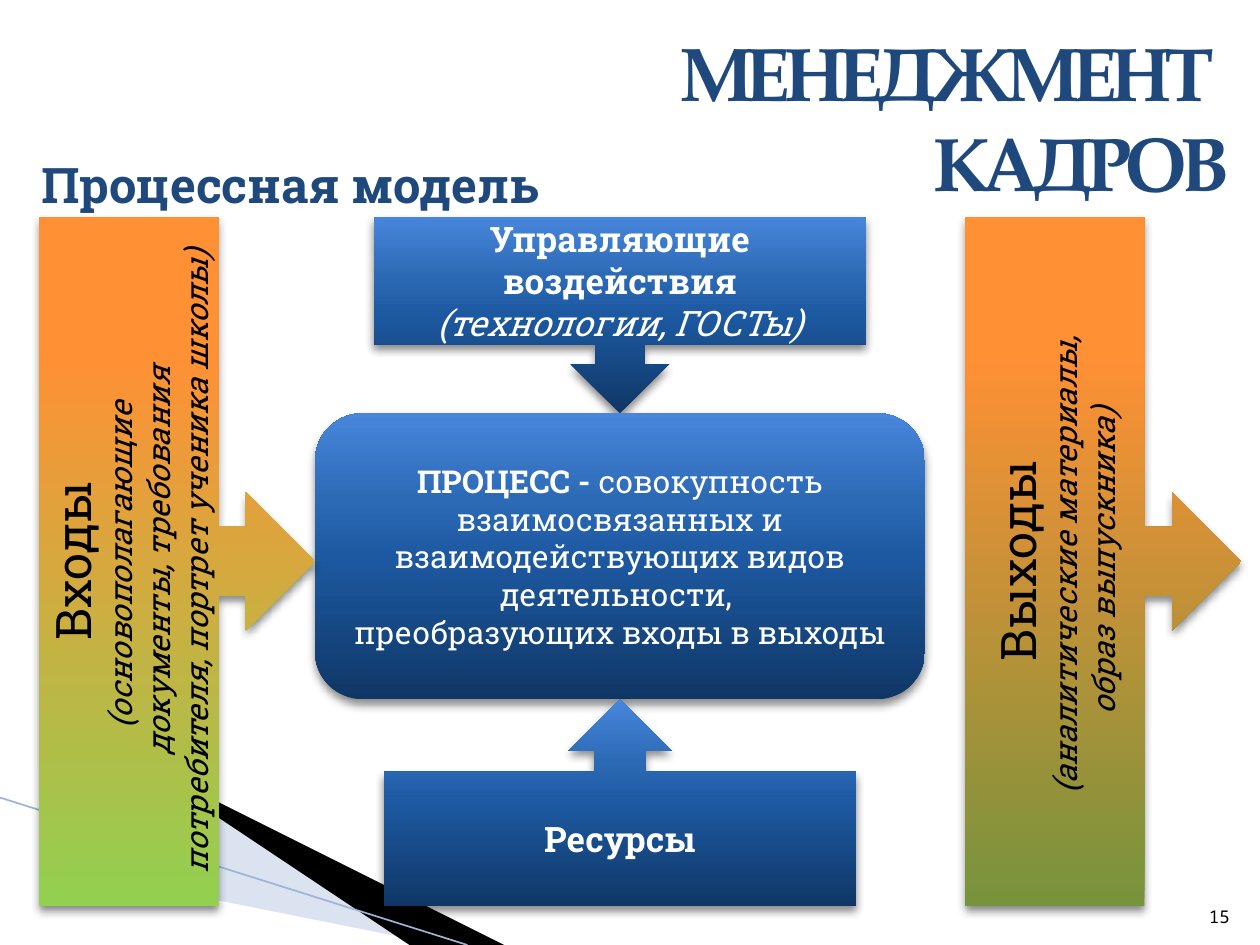
from dataclasses import dataclass

from lxml.etree import SubElement
from pptx import Presentation
from pptx.dml.color import RGBColor
from pptx.enum.shapes import MSO_CONNECTOR, MSO_SHAPE as Preset
from pptx.enum.text import MSO_ANCHOR as Anchor, MSO_AUTO_SIZE as AutoSize, PP_ALIGN as Align
from pptx.oxml.ns import qn
from pptx.util import Inches, Pt


@dataclass(frozen=True)
class Theme:
    body: str = "Roboto Slab"
    display: str = "TeX Gyre Pagella"
    number: str = "Noto Sans Mono"
    navy: str = "1F497D"
    white: str = "FFFFFF"
    black: str = "000000"
    pale: str = "A7B9DB"
    edge: str = "9EB3D6"
    blues: tuple = ((0, "0F3766"), (50, "1D59A1"), (70, "2D6AB6"), (100, "4786DB"))
    inputs: tuple = ((0, "92D050"), (80, "FF9034"), (100, "FF9136"))
    outputs: tuple = ((0, "77933C"), (80, "FF9034"), (100, "FF9136"))
    huge: int = 43
    large: int = 28
    medium: int = 20
    text: int = 18
    small: int = 10


THEME = Theme()

# Content: each paragraph is a list of (text, size, style) runs
HEADING = "МЕНЕДЖМЕНТ \vКАДРОВ"
SUBTITLE = "Процессная модель"
PAGE_NUMBER = "15"
CONTROLS = [[("Управляющие воздействия", THEME.medium, "b")],
            [("(технологии, ГОСТы)", THEME.medium, "i")]]
PROCESS = [[("ПРОЦЕСС - ", THEME.text, "b"),
            ("совокупность взаимосвязанных и взаимодействующих видов деятельности, ", THEME.text, "")],
           [("преобразующих входы в выходы", THEME.text, "")]]
RESOURCES = [[("Ресурсы", THEME.medium, "b")]]
INPUTS = [[("Входы", THEME.large, "")],
          [("(основополагающие ", THEME.text, "i")],
          [("документы, требования", THEME.text, "i")],
          [("потребителя, портрет ученика школы)", THEME.text, "i")]]
OUTPUTS = [[("Выходы", THEME.large, "")],
           [("(аналитические материалы, ", THEME.text, "i")],
           [("образ выпускника)", THEME.text, "i")]]

# Layout in inches: a centred stack between two side columns
WIDTH, HEIGHT = 10, 7.5
TOP, CENTRE = 1.72, 4.92
STACK = [(Preset.DOWN_ARROW_CALLOUT, 3.91, 1.56, CONTROLS),
         (Preset.ROUNDED_RECTANGLE, 4.84, 2.27, PROCESS),
         (Preset.UP_ARROW_CALLOUT, 3.75, 1.64, RESOURCES)]
SIDE_WIDTH = 2.19
SIDES = [(0.31, THEME.inputs, INPUTS), (7.66, THEME.outputs, OUTPUTS)]
WEDGES = [([(0.55, 6.51), (5.95, HEIGHT), (4.56, HEIGHT), (0.55, 6.5)], THEME.pale, 40),
          ([(0.53, 6.49), (4.57, HEIGHT), (3.72, HEIGHT), (0.54, 6.5)], THEME.black, 100)]


def style(font, size, colour, name=THEME.body, bold=False, italic=False):
    font.name, font.size = name, Pt(size)
    font.bold, font.italic = bold, italic
    font.color.rgb = RGBColor.from_string(colour)


def add_colour(parent, colour, alpha=100):
    element = SubElement(parent, qn("a:srgbClr"), val=colour)
    SubElement(element, qn("a:alpha"), val=str(alpha * 1000))


def fill_gradient(shape, stops):
    shape.fill.gradient()
    shape.fill.gradient_angle = 90
    stop_list = shape._element.spPr.find(qn("a:gradFill")).find(qn("a:gsLst"))
    for old in list(stop_list):
        stop_list.remove(old)
    for position, colour in stops:
        add_colour(SubElement(stop_list, qn("a:gs"), pos=str(position * 1000)), colour)


def add_shadow(shape):
    shape.shadow.inherit = False
    effects = shape._element.spPr.find(qn("a:effectLst"))
    shadow = SubElement(effects, qn("a:outerShdw"), blurRad=str(Pt(5)), dist=str(Pt(3)),
                        dir="5400000", rotWithShape="0")
    add_colour(shadow, THEME.black, 45)


def add_block(page, preset, area, stops, paragraphs, colour, vertical=False):
    shape = page.shapes.add_shape(preset, *map(Inches, area))
    fill_gradient(shape, stops)
    shape.line.fill.background()
    add_shadow(shape)
    frame = shape.text_frame
    frame.word_wrap, frame.vertical_anchor = True, Anchor.MIDDLE
    if vertical:
        frame._txBody.bodyPr.set("vert", "vert270")
    for index, runs in enumerate(paragraphs):
        para = frame.add_paragraph() if index else frame.paragraphs[0]
        para.alignment = Align.CENTER
        for text, size, look in runs:
            span = para.add_run()
            span.text = text
            style(span.font, size, colour, bold=look == "b", italic=look == "i")


def write(box, text, align, anchor, **look):
    frame = box.text_frame
    frame.word_wrap, frame.auto_size = True, AutoSize.NONE
    frame.vertical_anchor = anchor
    frame.text = text
    para = frame.paragraphs[0]
    para.alignment = align
    for span in para.runs:
        style(span.font, **look)
    return para


def add_backdrop(page):
    for points, colour, alpha in WEDGES:
        builder = page.shapes.build_freeform(*points[0], scale=Inches(1))
        builder.add_line_segments(points[1:], close=True)
        wedge = builder.convert_to_shape()
        wedge.shadow.inherit = False
        wedge.line.fill.background()
        wedge.fill.solid()
        wedge.fill.fore_color.rgb = RGBColor.from_string(colour)
        tint = wedge._element.spPr.find(qn("a:solidFill"))[0]
        SubElement(tint, qn("a:alpha"), val=str(alpha * 1000))
    line = page.shapes.add_connector(MSO_CONNECTOR.STRAIGHT, 0, Inches(6.33),
                                     Inches(3.71), Inches(HEIGHT))
    line.line.color.rgb = RGBColor.from_string(THEME.edge)
    line.line.width = Pt(0.95)
    SubElement(line._element.spPr, qn("a:effectLst"))


def main():
    deck = Presentation()
    deck.slide_width, deck.slide_height = Inches(WIDTH), Inches(HEIGHT)
    page = deck.slides.add_slide(deck.slide_layouts[5])
    add_backdrop(page)

    # Page number and subtitle
    number = page.shapes.add_textbox(*map(Inches, (9.46, 7.01, 0.4, 0.4)))
    write(number, PAGE_NUMBER, Align.RIGHT, Anchor.BOTTOM,
          size=THEME.small, colour=THEME.black, name=THEME.number)
    title = page.shapes.title
    title.left, title.top, title.width, title.height = map(Inches, (0.23, 1.11, 5, 0.7))
    write(title, SUBTITLE, Align.LEFT, Anchor.MIDDLE,
          size=THEME.large, colour=THEME.navy, bold=True)

    # Central stack
    top = TOP
    for preset, width, height, paragraphs in STACK:
        area = (CENTRE - width / 2, top, width, height)
        add_block(page, preset, area, THEME.blues, paragraphs, THEME.white)
        top += height

    # Side columns, as tall as the stack
    for left, stops, paragraphs in SIDES:
        add_block(page, Preset.RIGHT_ARROW_CALLOUT, (left, TOP, SIDE_WIDTH, top - TOP),
                  stops, paragraphs, THEME.black, vertical=True)

    # Heading with tightened letters
    heading = page.shapes.add_textbox(*map(Inches, (3.67, 0.16, 6.17, 1.55)))
    para = write(heading, HEADING, Align.RIGHT, Anchor.TOP, size=THEME.huge,
                 colour=THEME.navy, name=THEME.display, bold=True)
    for span in para.runs:
        span._r.get_or_add_rPr().set("spc", "-200")

    deck.save("out.pptx")


if __name__ == "__main__":
    main()
